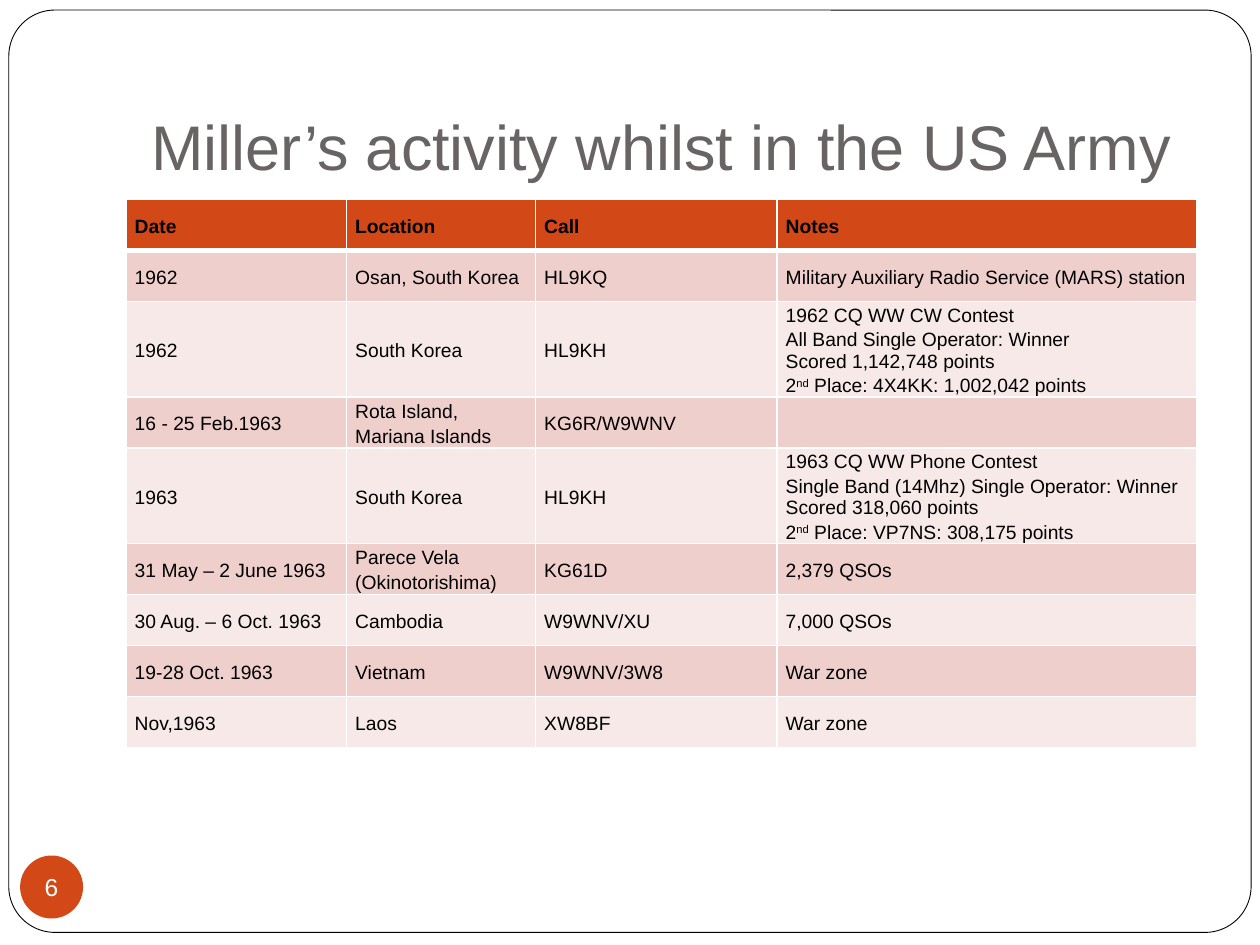
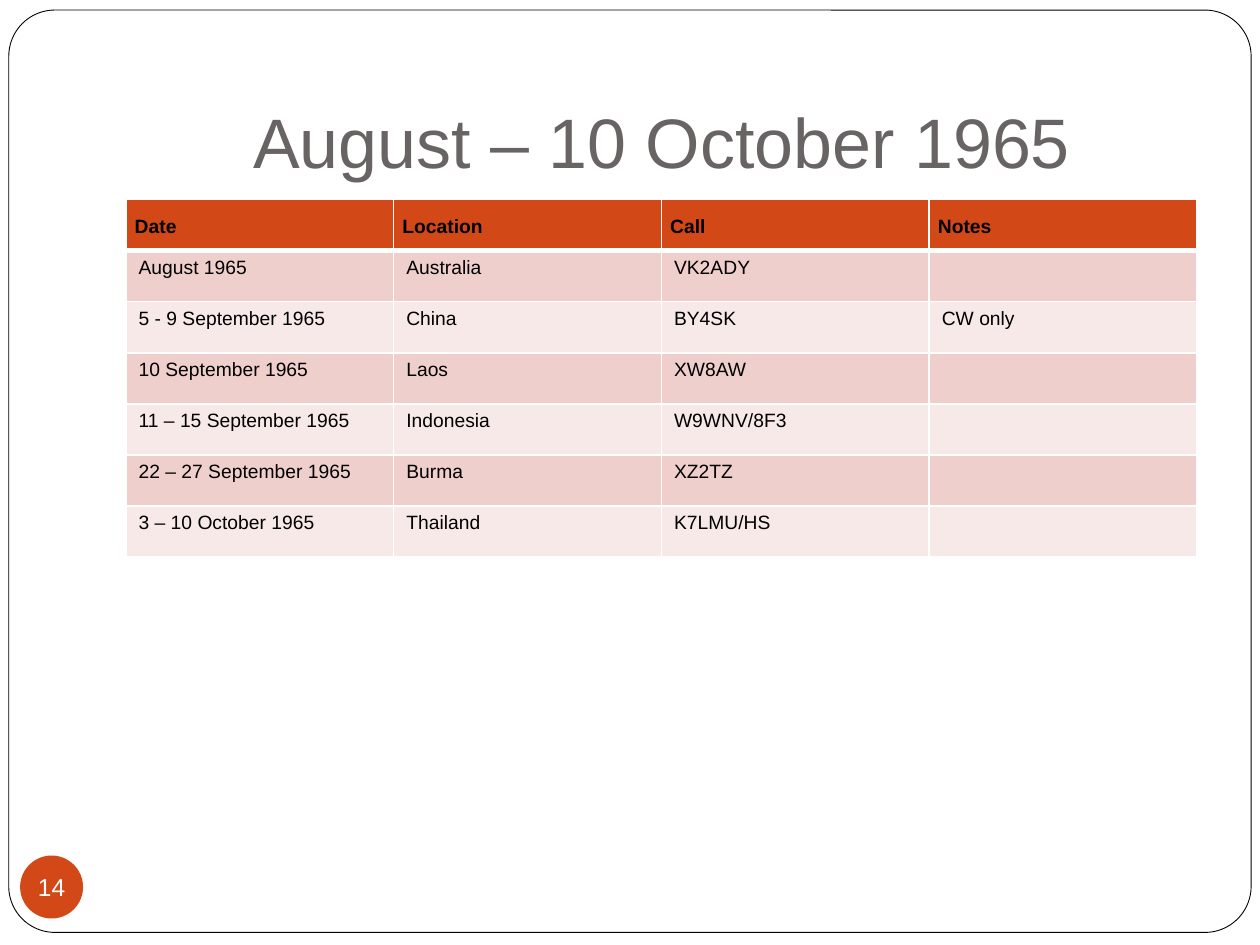
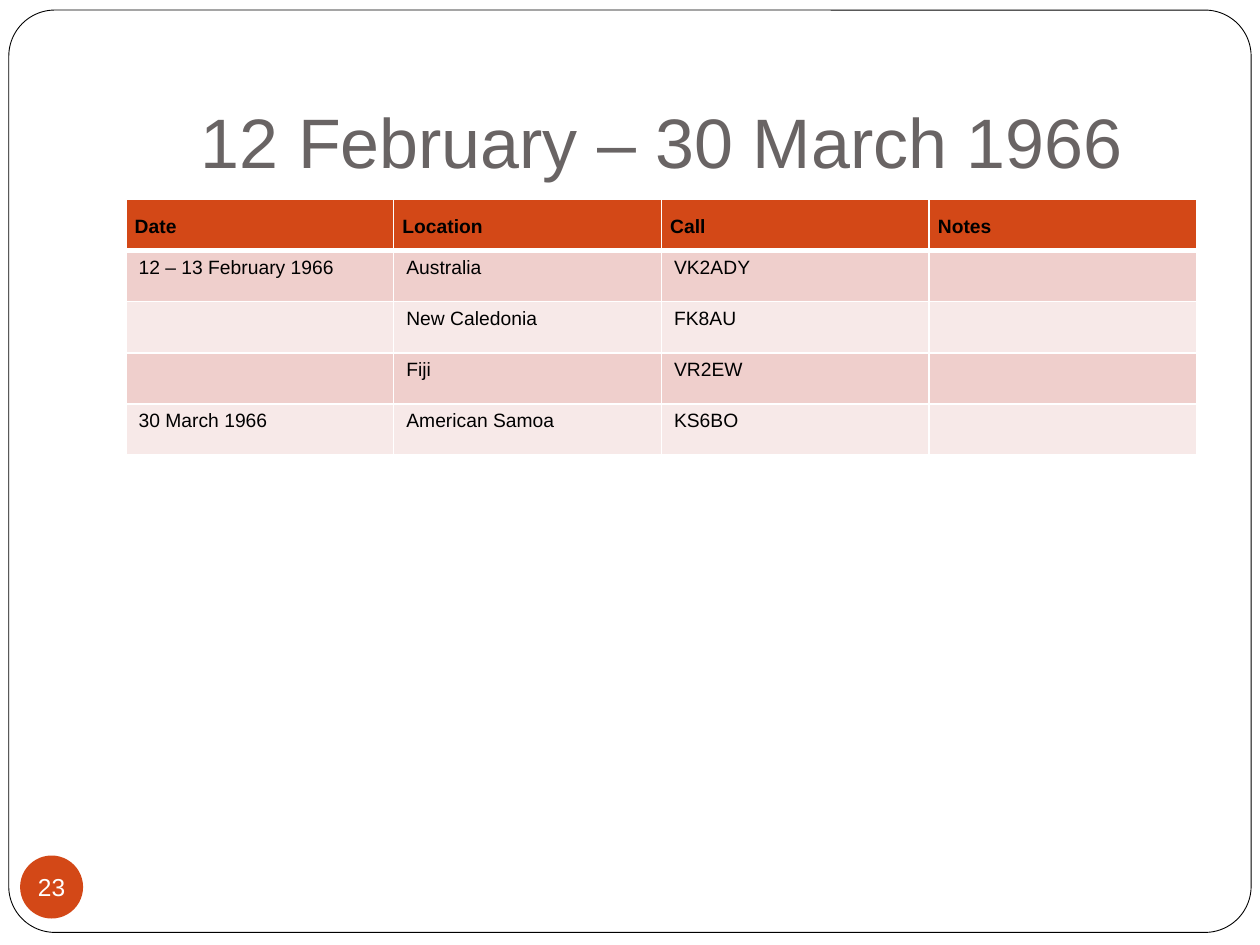
from dataclasses import dataclass

from lxml import etree
from pptx import Presentation
from pptx.dml.color import RGBColor
from pptx.enum.shapes import MSO_SHAPE
from pptx.enum.text import MSO_ANCHOR, MSO_AUTO_SIZE, PP_ALIGN
from pptx.oxml.ns import qn
from pptx.util import Pt

ROUNDED, OVAL = MSO_SHAPE.ROUNDED_RECTANGLE, MSO_SHAPE.OVAL
MIDDLE, TOP, BOTTOM = MSO_ANCHOR.MIDDLE, MSO_ANCHOR.TOP, MSO_ANCHOR.BOTTOM
CENTER = PP_ALIGN.CENTER
NO_FIT = MSO_AUTO_SIZE.NONE

# Shared look
COLORS = {
    "accent": "D34817",
    "title": "696464",
    "text": "000000",
    "white": "FFFFFF",
    "odd row": "EFCFCC",
    "even row": "F7E9E8",
}
FONT = "Arial"
TABLE_LEFT, TABLE_TOP, TABLE_WIDTH = 72, 114, 612
ROW_HEIGHT = 29.2
TITLE_BOX = {"left": Pt(72), "top": Pt(21.6), "width": Pt(612), "height": Pt(90)}
HEADINGS = ("Date", "Location", "Call", "Notes")
SINGLE_SPACED = "Scored"  # lines with this start keep plain line spacing


@dataclass(frozen=True)
class CellStyle:
    side_margin: float
    edge_margin: float
    anchor: MSO_ANCHOR
    line_spacing: float


COMPACT = CellStyle(5, 0, MIDDLE, 1.15)
ROOMY = CellStyle(7.2, 3.6, TOP, 1.0)


@dataclass(frozen=True)
class LogPage:
    number: int
    title: str
    title_size: int
    column_widths: tuple[float, ...]
    body_style: CellStyle
    rows: tuple[tuple[str, ...], ...]


EQUAL_COLUMNS = (TABLE_WIDTH / len(HEADINGS),) * len(HEADINGS)

# Content: line breaks part paragraphs, carets enclose superscripts
PAGES = (
    LogPage(6, "Miller’s activity whilst in the US Army", 36, (126, 108, 138, 240), COMPACT, (
        ("1962", "Osan, South Korea", "HL9KQ",
         "Military Auxiliary Radio Service (MARS) station"),
        ("1962", "South Korea", "HL9KH",
         "1962 CQ WW CW Contest\nAll Band Single Operator: Winner\n"
         "Scored 1,142,748 points\n2^nd^ Place: 4X4KK: 1,002,042 points"),
        ("16 - 25 Feb.1963", "Rota Island, Mariana Islands", "KG6R/W9WNV", ""),
        ("1963", "South Korea", "HL9KH",
         "1963 CQ WW Phone Contest\nSingle Band (14Mhz) Single Operator: Winner\n"
         "Scored 318,060 points\n2^nd^ Place: VP7NS: 308,175 points"),
        ("31 May – 2 June 1963", "Parece Vela\n(Okinotorishima)", "KG61D", "2,379 QSOs"),
        ("30 Aug. – 6 Oct. 1963", "Cambodia", "W9WNV/XU", "7,000 QSOs"),
        ("19-28 Oct. 1963", "Vietnam", "W9WNV/3W8", "War zone"),
        ("Nov,1963", "Laos", "XW8BF", "War zone"),
    )),
    LogPage(14, "August – 10 October 1965", 40, EQUAL_COLUMNS, ROOMY, (
        ("August 1965", "Australia", "VK2ADY", ""),
        ("5 - 9 September 1965", "China", "BY4SK", "CW only"),
        ("10 September 1965", "Laos", "XW8AW", ""),
        ("11 – 15 September 1965", "Indonesia", "W9WNV/8F3", ""),
        ("22 – 27 September 1965", "Burma", "XZ2TZ", ""),
        ("3 – 10 October 1965", "Thailand", "K7LMU/HS", ""),
    )),
    LogPage(23, "12 February – 30 March 1966", 40, EQUAL_COLUMNS, ROOMY, (
        ("12 – 13 February 1966", "Australia", "VK2ADY", ""),
        ("", "New Caledonia", "FK8AU", ""),
        ("", "Fiji", "VR2EW", ""),
        ("30 March 1966", "American Samoa", "KS6BO", ""),
    )),
)


def color(name: str) -> RGBColor:
    return RGBColor.from_string(COLORS[name])


def apply(target, values: dict) -> None:
    for name, value in values.items():
        setattr(target, name, value)


def add_span(para, text: str, size: float, color_name: str, bold: bool = False):
    span = para.add_run()
    span.text = text
    apply(span.font, {"name": FONT, "size": Pt(size), "bold": bold})
    span.font.color.rgb = color(color_name)
    return span


def add_frame(page, layout) -> None:
    """Draw the rounded page border and place it at the back of the layout."""
    frame = page.shapes.add_shape(ROUNDED, Pt(5.04), Pt(5.76), Pt(709.92), Pt(527.04))
    frame.adjustments[0] = 0.05
    frame.shadow.inherit = False
    frame.fill.solid()
    frame.fill.fore_color.rgb = color("white")
    frame.line.color.rgb = color("text")
    frame.line.width = Pt(0.5)
    layout.shapes.element.insert(2, frame.element)


def set_title(page, text: str, size: int) -> None:
    title = page.shapes.title
    apply(title, TITLE_BOX)
    box = title.text_frame
    apply(box, {"auto_size": NO_FIT, "word_wrap": True, "vertical_anchor": BOTTOM,
                "margin_left": Pt(7.2), "margin_right": Pt(7.2),
                "margin_top": Pt(3.6), "margin_bottom": Pt(7.2)})
    para = box.paragraphs[0]
    para.alignment = CENTER
    add_span(para, text, size, "title")


def add_page_number(page, number: int) -> None:
    badge = page.shapes.add_shape(OVAL, Pt(11.52), Pt(488.88), Pt(36), Pt(36))
    badge.shadow.inherit = False
    badge.fill.solid()
    badge.fill.fore_color.rgb = color("accent")
    badge.line.fill.background()
    box = badge.text_frame
    apply(box, {"word_wrap": False, "vertical_anchor": MIDDLE, "margin_left": 0,
                "margin_right": 0, "margin_top": 0, "margin_bottom": 0})
    para = box.paragraphs[0]
    para.alignment = CENTER
    add_span(para, str(number), 14, "white")


def set_borders(cell, top: float, bottom: float) -> None:
    properties = cell._tc.get_or_add_tcPr()
    for side, width in (("L", 1), ("R", 1), ("T", top), ("B", bottom)):
        line = etree.SubElement(properties, qn(f"a:ln{side}"), w=str(Pt(width)))
        fill = etree.SubElement(line, qn("a:solidFill"))
        etree.SubElement(fill, qn("a:srgbClr"), val=COLORS["white"])


def fill_cell(cell, text: str, style: CellStyle, fill_name: str, bold: bool) -> None:
    cell.fill.solid()
    cell.fill.fore_color.rgb = color(fill_name)
    apply(cell, {"vertical_anchor": style.anchor,
                 "margin_left": Pt(style.side_margin), "margin_right": Pt(style.side_margin),
                 "margin_top": Pt(style.edge_margin), "margin_bottom": Pt(style.edge_margin)})
    if not text:
        return
    box = cell.text_frame
    for index, line in enumerate(text.split("\n")):
        para = box.add_paragraph() if index else box.paragraphs[0]
        para.line_spacing = 1.0 if line.startswith(SINGLE_SPACED) else style.line_spacing
        for part, piece in enumerate(line.split("^")):
            span = add_span(para, piece, 11, "text", bold)
            if part % 2:
                span._r.get_or_add_rPr().set("baseline", "30000")


def add_log_table(page, log: LogPage) -> None:
    rows = (HEADINGS, *log.rows)
    table = page.shapes.add_table(
        len(rows), len(HEADINGS), Pt(TABLE_LEFT), Pt(TABLE_TOP),
        Pt(TABLE_WIDTH), Pt(ROW_HEIGHT * len(rows))).table
    table.horz_banding = False
    for column, width in zip(table.columns, log.column_widths):
        column.width = Pt(width)
    for row_index, values in enumerate(rows):
        table.rows[row_index].height = Pt(ROW_HEIGHT)
        is_header = row_index == 0
        style = COMPACT if is_header else log.body_style
        fill_name = "accent" if is_header else "odd row" if row_index % 2 else "even row"
        for column_index, text in enumerate(values):
            cell = table.cell(row_index, column_index)
            set_borders(cell, 3 if row_index == 1 else 1, 3 if is_header else 1)
            fill_cell(cell, text, style, fill_name, is_header)


def main() -> None:
    deck = Presentation()
    deck.slide_width, deck.slide_height = Pt(720), Pt(540)
    layout = deck.slide_layouts[5]  # title only
    for index, log in enumerate(PAGES):
        page = deck.slides.add_slide(layout)
        if index == 0:
            add_frame(page, layout)
        set_title(page, log.title, log.title_size)
        add_page_number(page, log.number)
        add_log_table(page, log)
    deck.save("out.pptx")


if __name__ == "__main__":
    main()
